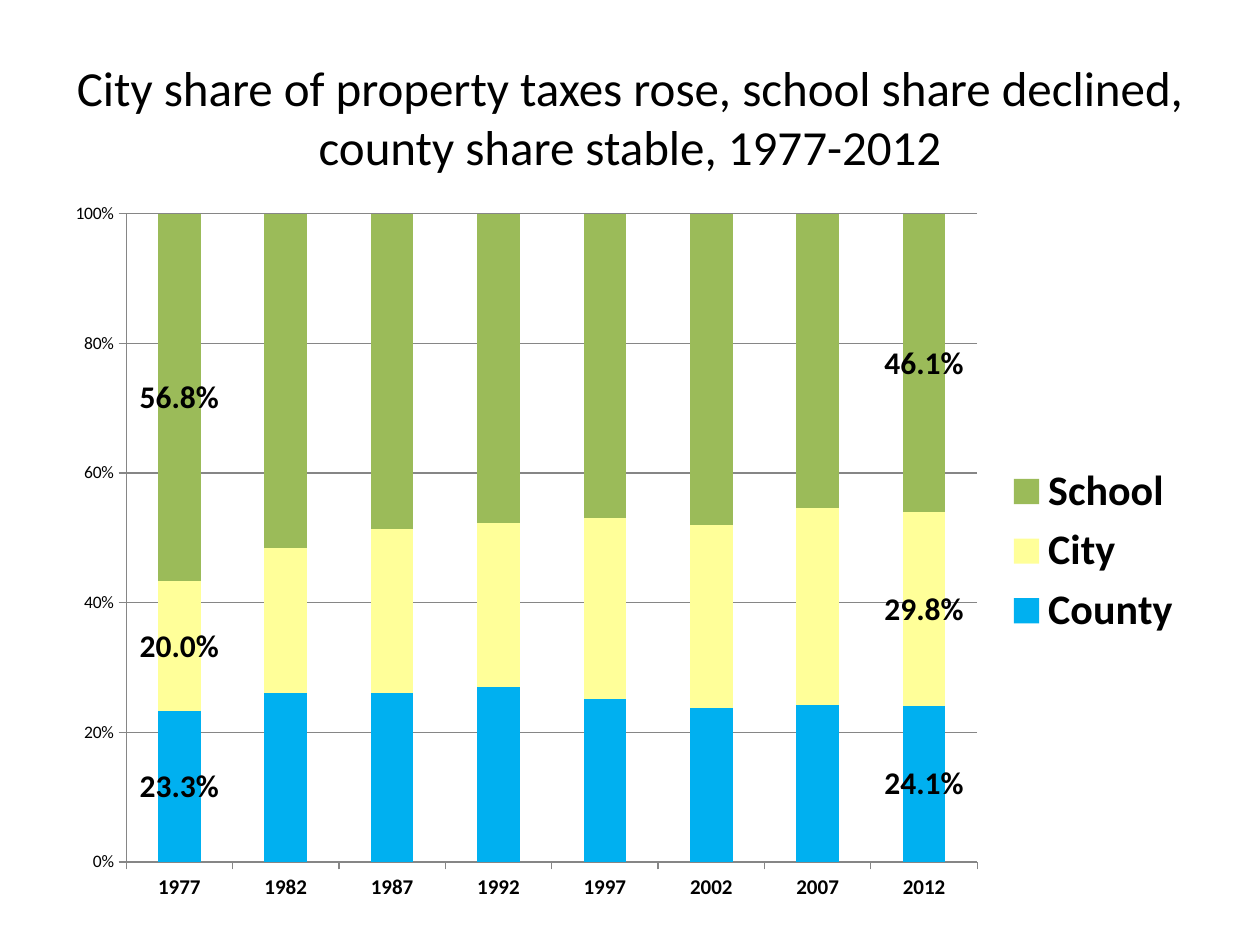
from lxml import etree
from pptx import Presentation
from pptx.chart.data import CategoryChartData
from pptx.dml.color import RGBColor
from pptx.enum import chart as ch, text
from pptx.oxml.ns import qn
from pptx.util import Inches, Pt

BLACK = RGBColor(0, 0, 0)
GRAY = RGBColor(0x86, 0x86, 0x86)
BLUE = RGBColor(0x00, 0xB0, 0xF0)
YELLOW = RGBColor(0xFF, 0xFF, 0x99)
GREEN = RGBColor(0x9B, 0xBB, 0x59)

YEARS = [str(year) for year in range(1977, 2013, 5)]
SHARES = {
    "County": (BLUE, [0.233, 0.261, 0.260, 0.269, 0.252, 0.237, 0.242, 0.241]),
    "City": (YELLOW, [0.200, 0.223, 0.254, 0.254, 0.278, 0.282, 0.304, 0.298]),
    "School": (GREEN, [0.568, 0.516, 0.486, 0.477, 0.470, 0.481, 0.454, 0.461]),
}


def set_font(font, size, bold=False):
    for name, value in {"name": "Calibri", "size": Pt(size), "bold": bold}.items():
        setattr(font, name, value)
    font.color.rgb = BLACK


prs = Presentation()
prs.slide_width, prs.slide_height = Inches(10), Inches(7.5)
slide = prs.slides.add_slide(prs.slide_layouts[6])

# Title
title = slide.shapes.add_textbox(Inches(0.5), Inches(0.3), Inches(9), Inches(1.25)).text_frame
title.word_wrap = True
title.vertical_anchor = text.MSO_ANCHOR.MIDDLE
headline = title.paragraphs[0]
headline.alignment = text.PP_ALIGN.CENTER
headline.text = ("City share of property taxes rose, school share declined, "
                 "county share stable, 1977-2012")
set_font(headline.runs[0].font, 28)

# Chart of tax shares
shares = CategoryChartData(number_format="0.0%")
shares.categories = YEARS
for level, (_, values) in SHARES.items():
    shares.add_series(level, values)
chart = slide.shapes.add_chart(
    ch.XL_CHART_TYPE.COLUMN_STACKED_100,
    Inches(0.42), Inches(1.5), Inches(9.08), Inches(5.75), shares).chart
chart.has_title = False
set_font(chart.font, 10)

plot = chart.plots[0]
plot.gap_width, plot.overlap = 150, 100
plot.vary_by_categories = False
for series, (color, _) in zip(plot.series, SHARES.values()):
    series.format.fill.solid()
    series.format.fill.fore_color.rgb = color
    series.data_labels.show_value = False
    for end in (0, len(YEARS) - 1):
        label = series.points[end].data_label
        set_font(label.font, 18, bold=True)
        label.position = ch.XL_LABEL_POSITION.CENTER

# Axes and legend
year_axis, share_axis = chart.category_axis, chart.value_axis
for axis in (year_axis, share_axis):
    axis.major_tick_mark = ch.XL_TICK_MARK.OUTSIDE
    axis.minor_tick_mark = ch.XL_TICK_MARK.NONE
    axis.format.line.color.rgb = GRAY
set_font(year_axis.tick_labels.font, 12, bold=True)
set_font(share_axis.tick_labels.font, 10)
share_axis.minimum_scale, share_axis.maximum_scale, share_axis.major_unit = 0, 1, 0.2
share_axis.has_major_gridlines = True
share_axis.major_gridlines.format.line.color.rgb = GRAY
share_axis.tick_labels.number_format = "0%"
share_axis.tick_labels.number_format_is_linked = False

chart.has_legend = True
chart.legend.position = ch.XL_LEGEND_POSITION.RIGHT
chart.legend.include_in_layout = False
set_font(chart.legend.font, 24, bold=True)

# Inner plot area, as fractions of the chart
plot_area = chart.element.find(".//" + qn("c:plotArea"))
for old in plot_area.findall(qn("c:layout")):
    plot_area.remove(old)
layout = etree.Element(qn("c:layout"))
plot_area.insert(0, layout)
manual = etree.SubElement(layout, qn("c:manualLayout"))
for tag, value in {"layoutTarget": "inner", "xMode": "edge", "yMode": "edge",
                   "x": 0.064, "y": 0.034, "w": 0.744, "h": 0.895}.items():
    etree.SubElement(manual, qn("c:" + tag)).set("val", str(value))

prs.save("out.pptx")
